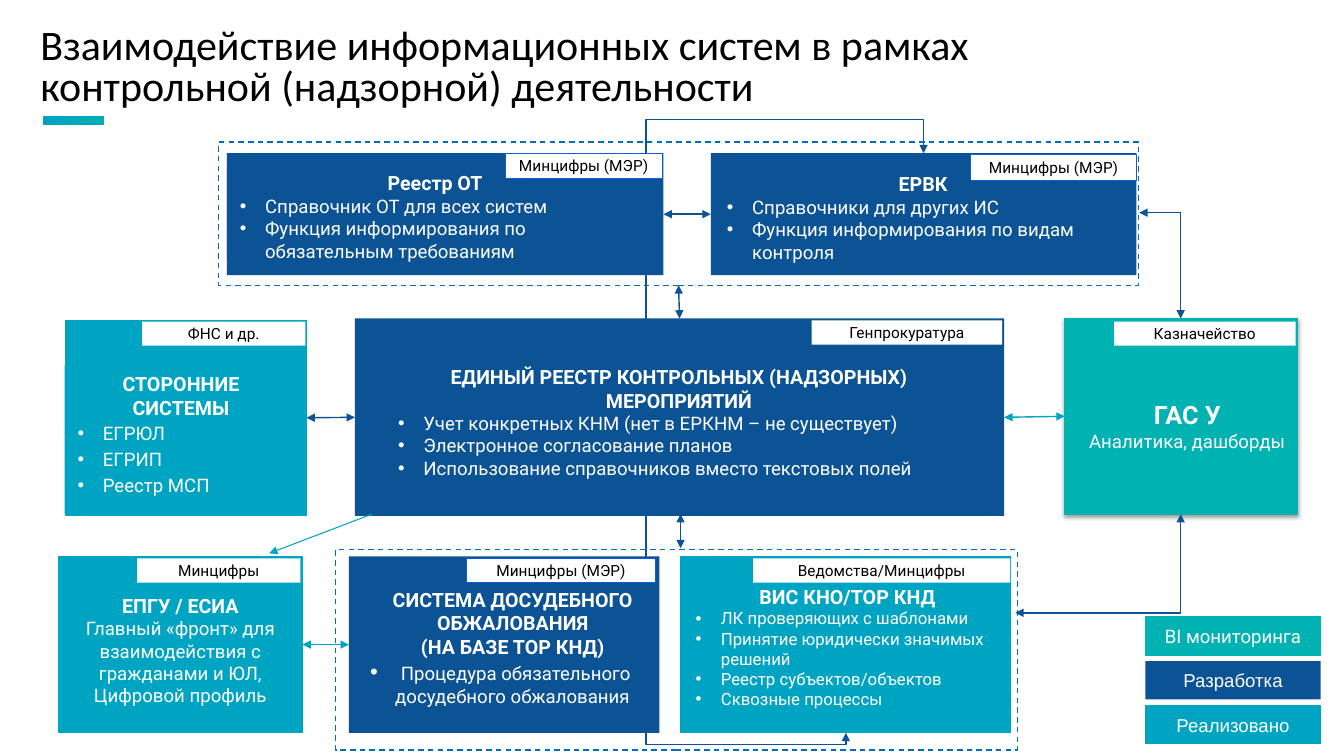
from lxml.etree import SubElement
from pptx import Presentation
from pptx.dml.color import RGBColor
from pptx.enum.dml import MSO_LINE
from pptx.enum.shapes import MSO_CONNECTOR as Connector, MSO_SHAPE as Shape
from pptx.enum.text import MSO_ANCHOR as Anchor, MSO_AUTO_SIZE as AutoSize, PP_ALIGN as Align
from pptx.oxml.ns import qn
from pptx.util import Pt

PX = 9144  # one hundredth of an inch
SLIDE_SIZE = (1333, 750)
NAVY, BLUE, TEAL = "0B5394", "00A4C3", "00B2B1"
WHITE, BLACK, FRAME, TAG_LINE = "FFFFFF", "000000", "006FB9", "0D5BDC"

TITLE = "Взаимодействие информационных систем в рамках контрольной (надзорной) деятельности"
TITLE_BOX = (37, 3, 1143, 131)
ACCENT_BOX = (43, 116, 60, 7)
ACCENT_STOPS = ("00A0C3", "00B3A9")

KINDS = {
    "name": {"size": 14, "bold": True},
    "large": {"size": 18, "bold": True},
    "plain": {"size": 13.3},
    "item": {"size": 13.3, "bullet": True},
    "loose": {"size": 13.3, "bullet": True, "spacing": 1.15},
    "small": {"size": 12, "bullet": True},
    "lead": {"size": 13.3, "bullet": True, "lead": 16},
    "tag": {"size": 11, "color": BLACK},
    "key": {"size": 13.3},
}

# name: (panel box, colour, outlined, text box, text box colour, paragraphs)
SYSTEMS = {
    "gas": ((1056, 316, 231, 194), TEAL, True, (1063, 389, 229, 90), None, [
        ("large", "ГАС У"), ("plain", "Аналитика, дашборды")]),
    "ervk": ((705, 152, 422, 121), NAVY, False, (708, 164, 415, 97), NAVY, [
        ("name", "ЕРВК"),
        ("item", "Справочники для других ИС"),
        ("item", "Функция информирования по видам контроля")]),
    "requirements": ((225, 152, 433, 121), NAVY, False, (225, 163, 413, 95), NAVY, [
        ("name", "Реестр ОТ"),
        ("item", "Справочник ОТ для всех систем"),
        ("item", "Функция информирования по обязательным требованиям")]),
    "portal": ((58, 552, 242, 175), BLUE, True, (66, 582, 226, 108), None, [
        ("name", "ЕПГУ / ЕСИА"),
        ("plain", "Главный «фронт» для взаимодействия с гражданами и ЮЛ, Цифровой профиль")]),
    "registry": ((352, 316, 644, 196), NAVY, False, (382, 355, 583, 162), None, [
        ("name", "ЕДИНЫЙ РЕЕСТР КОНТРОЛЬНЫХ (НАДЗОРНЫХ) МЕРОПРИЯТИЙ"),
        ("item", "Учет конкретных КНМ (нет в ЕРКНМ – не существует)"),
        ("item", "Электронное согласование планов"),
        ("item", "Использование справочников вместо текстовых полей")]),
    "departments": ((675, 552, 327, 175), BLUE, True, (677, 573, 327, 177), None, [
        ("name", "ВИС КНО/ТОР КНД"),
        ("small", "ЛК проверяющих с шаблонами"),
        ("small", "Принятие юридически значимых решений"),
        ("small", "Реестр субъектов/объектов"),
        ("small", "Сквозные процессы")]),
    "appeals": ((346, 552, 308, 175), NAVY, False, (354, 576, 309, 148), None, [
        ("name", "СИСТЕМА ДОСУДЕБНОГО ОБЖАЛОВАНИЯ\n(НА БАЗЕ ТОР КНД)"),
        ("lead", "Процедура обязательного досудебного обжалования")]),
    "external": ((65, 318, 239, 193), BLUE, True, (64, 362, 231, 148), BLUE, [
        ("name", "СТОРОННИЕ СИСТЕМЫ"),
        ("loose", "ЕГРЮЛ"), ("loose", "ЕГРИП"), ("loose", "Реестр МСП")]),
}
GROUPED = ("ervk", "requirements")
FRAMES = {"top": (217, 141, 912, 142), "bottom": (333, 545, 676, 199)}

TAGS = [
    ("Казначейство", (1105, 319, 180, 24), None),
    ("Ведомства/Минцифры", (747, 554, 255, 24), None),
    ("Минцифры (МЭР)", (501, 152, 156, 25), TAG_LINE),
    ("Генпрокуратура", (805, 318, 189, 24), None),
    ("ФНС и др.", (141, 319, 162, 24), None),
    ("Минцифры", (136, 554, 162, 24), None),
    ("Минцифры (МЭР)", (963, 153, 164, 26), TAG_LINE),
    ("Минцифры (МЭР)", (463, 554, 187, 24), TAG_LINE),
]
LEGEND = [("BI мониторинга", TEAL, TEAL, "Roboto"),
          ("Разработка", NAVY, None, "Arial"),
          ("Реализовано", BLUE, BLUE, "Arial")]
LEGEND_BOX, LEGEND_STEP = (1136, 612, 174, 38), 44

# from, side, to, side, colour; sides: 0 top, 1 left, 2 bottom, 3 right
JOINED = [
    ("registry", 0, "top", 2, NAVY),
    ("requirements", 3, "ervk", 1, NAVY),
    ("registry", 3, "gas", 1, BLUE),
    ("registry", 1, "external", 3, NAVY),
    ("portal", 3, "appeals", 1, BLUE),
]
CORNERS = [(1130, 211, 1171, 316), (1007, 608, 1171, 510)]
BYPASS = (1165, 478, 590, 401)
BYPASS_ADJUST = (-5800, 357600, 102000)


def rgb(color):
    return RGBColor.from_string(color)


def scaled(lengths):
    return [round(length * PX) for length in lengths]


def add_box(box, fill=None, line=None, width=0.75):
    shape = slide.shapes.add_shape(Shape.RECTANGLE, *scaled(box))
    shape.shadow.inherit = False
    if fill:
        shape.fill.solid()
        shape.fill.fore_color.rgb = rgb(fill)
    else:
        shape.fill.background()
    if line:
        shape.line.color.rgb = rgb(line)
        shape.line.width = Pt(width)
    else:
        shape.line.fill.background()
    return shape


def set_frame(shape, anchor, horizontal=13, vertical=7):
    side, edge = scaled((horizontal, vertical))
    settings = {"word_wrap": True, "auto_size": AutoSize.NONE, "vertical_anchor": anchor,
                "margin_left": side, "margin_right": side,
                "margin_top": edge, "margin_bottom": edge}
    for name, value in settings.items():
        setattr(shape.text_frame, name, value)


def style_run(run, size, font="Roboto", color=WHITE, bold=False):
    for name, value in {"size": Pt(size), "name": font, "bold": bold}.items():
        setattr(run.font, name, value)
    run.font.color.rgb = rgb(color)


def add_bullet(paragraph):
    properties = paragraph._p.get_or_add_pPr()
    properties.set("marL", str(25 * PX))
    properties.set("indent", str(-25 * PX))
    SubElement(SubElement(properties, qn("a:buClr")), qn("a:srgbClr"), val=WHITE)
    SubElement(properties, qn("a:buFont"), typeface="Arial")
    SubElement(properties, qn("a:buChar"), char="•")


def write(shape, paragraphs, anchor=Anchor.TOP, font="Roboto"):
    set_frame(shape, anchor)
    for index, (kind, text) in enumerate(paragraphs):
        style = KINDS[kind]
        frame = shape.text_frame
        paragraph = frame.add_paragraph() if index else frame.paragraphs[0]
        if "lead" in style:
            style_run(paragraph.add_run(), style["lead"])
            paragraph.runs[0].text = " "
            paragraph.add_run().text = text
        else:
            paragraph.text = text
        for run in paragraph.runs[1 if "lead" in style else 0:]:
            style_run(run, style["size"], font, style.get("color", WHITE), style.get("bold", False))
        paragraph.alignment = Align.LEFT if "bullet" in style else Align.CENTER
        paragraph.line_spacing = style.get("spacing")
        if "bullet" in style:
            add_bullet(paragraph)


def add_arrow(ends=(0, 0, 0, 0), color=NAVY, kind=Connector.STRAIGHT, width=1,
              heads=("headEnd", "tailEnd")):
    connector = slide.shapes.add_connector(kind, *scaled(ends))
    connector.line.color.rgb = rgb(color)
    connector.line.width = Pt(width)
    for head in heads:
        SubElement(connector.line._get_or_add_ln(), qn("a:" + head), type="triangle")
    SubElement(connector._element.spPr, qn("a:effectLst"))
    return connector


def set_bend(connector, preset, adjustments=(), rotation=0):
    """Choose the bent preset, its adjustments and its turn in degrees."""
    properties = connector._element.spPr
    geometry = properties.find(qn("a:prstGeom"))
    geometry.set("prst", preset)
    guides = geometry.find(qn("a:avLst"))
    if guides is None:
        guides = SubElement(geometry, qn("a:avLst"))
    for number, value in enumerate(adjustments, 1):
        SubElement(guides, qn("a:gd"), name=f"adj{number}", fmla=f"val {value}")
    if rotation:
        properties.find(qn("a:xfrm")).set("rot", str(rotation * 60000))


def add_shadow(shape):
    effects = shape._element.spPr.find(qn("a:effectLst"))
    shadow = SubElement(effects, qn("a:outerShdw"), blurRad=str(Pt(3.1)), dist=str(Pt(1.6)),
                        dir="5400000", algn="ctr", rotWithShape="0")
    SubElement(SubElement(shadow, qn("a:srgbClr"), val=BLACK), qn("a:alpha"), val="37000")


presentation = Presentation()
presentation.slide_width, presentation.slide_height = scaled(SLIDE_SIZE)
slide = presentation.slides.add_slide(presentation.slide_layouts[5])

title = slide.shapes.title
title.left, title.top, title.width, title.height = scaled(TITLE_BOX)
title.text_frame.text = TITLE
set_frame(title, Anchor.MIDDLE, 3, 3)
heading = title.text_frame.paragraphs[0]
for name, value in {"alignment": Align.LEFT, "line_spacing": 0.8, "space_before": Pt(21)}.items():
    setattr(heading, name, value)
style_run(heading.runs[0], 30, "Calibri", BLACK)

set_bend(add_arrow(BYPASS, kind=Connector.ELBOW), "bentConnector5", BYPASS_ADJUST, 270)

accent = add_box(ACCENT_BOX, BLUE, BLUE, 1)
accent.fill.gradient()
accent.fill.gradient_angle = 0
for stop, color in zip(accent.fill.gradient_stops, ACCENT_STOPS):
    stop.color.rgb = rgb(color)

boxes = {}
for name, (box, color, outlined, text_box, text_fill, paragraphs) in SYSTEMS.items():
    boxes[name] = add_box(box, color, color if outlined else None)
    body = add_box(text_box, text_fill) if text_fill else slide.shapes.add_textbox(*scaled(text_box))
    write(body, paragraphs)
    if name in GROUPED:
        slide.shapes.add_group_shape([boxes[name], body])
add_shadow(boxes["gas"])

for name, box in FRAMES.items():
    boxes[name] = add_box(box, line=FRAME, width=1)
    boxes[name].line.dash_style = MSO_LINE.DASH

for start, start_side, end, end_side, color in JOINED:
    arrow = add_arrow(color=color)
    arrow.begin_connect(boxes[start], start_side)
    arrow.end_connect(boxes[end], end_side)
for ends in CORNERS:
    set_bend(add_arrow(ends, kind=Connector.ELBOW), "bentConnector2")
add_arrow((675, 544, 675, 510))
add_arrow((267, 549, 369, 510), BLUE, width=0.75, heads=("headEnd",))

for text, box, line in TAGS:
    write(add_box(box, WHITE, line), [("tag", text)], Anchor.MIDDLE)
left, top, width, height = LEGEND_BOX
for row, (text, fill, line, font) in enumerate(LEGEND):
    key = add_box((left, top + row * LEGEND_STEP, width, height), fill, line)
    write(key, [("key", text)], Anchor.MIDDLE, font)

presentation.save("out.pptx")
